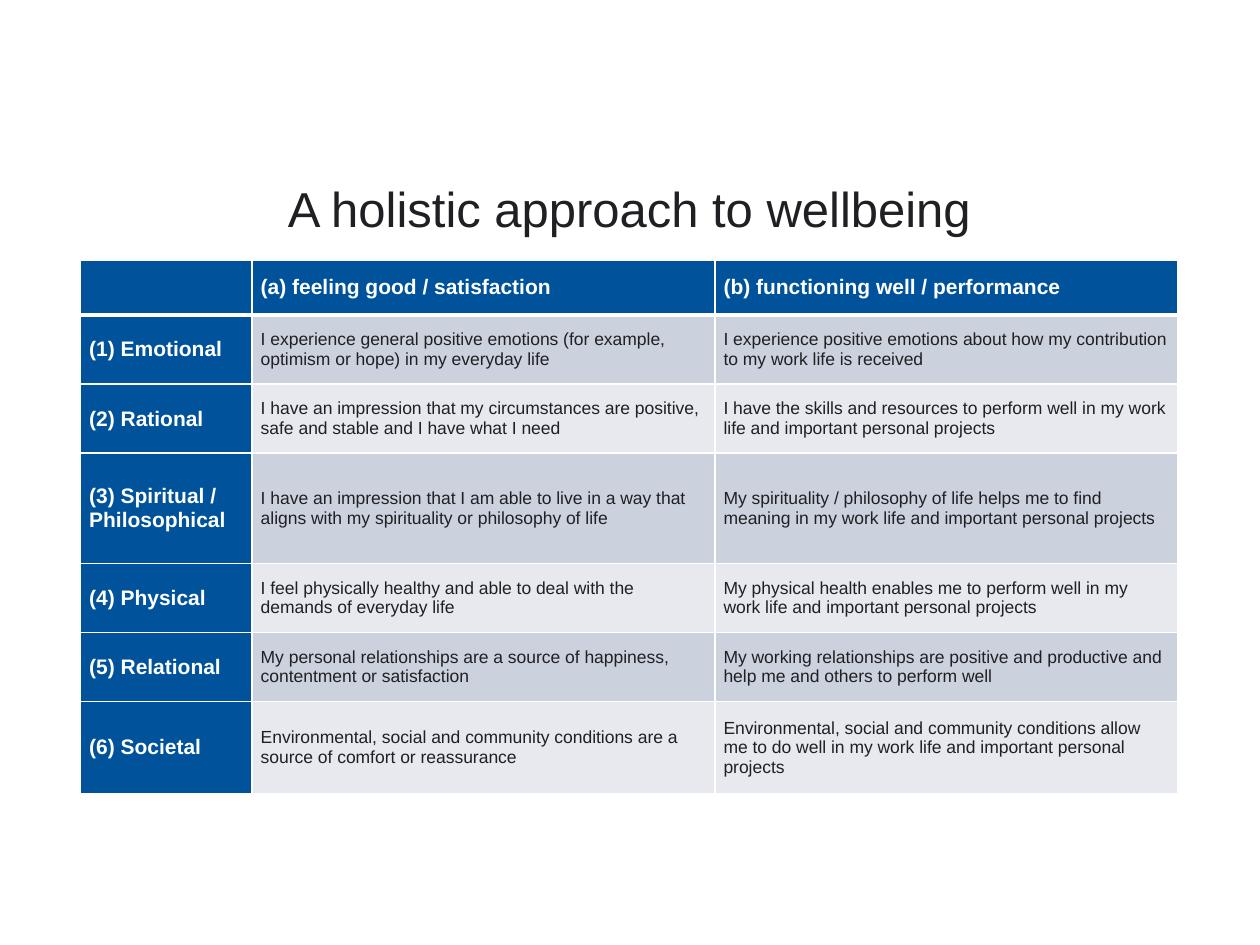
from lxml.etree import SubElement
from pptx import Presentation
from pptx.dml.color import RGBColor
from pptx.enum.text import MSO_ANCHOR, PP_ALIGN
from pptx.oxml.ns import qn
from pptx.util import Pt

TITLE = "A holistic approach to wellbeing"
ROWS = [
    ("", "(a) feeling good / satisfaction", "(b) functioning well / performance"),
    ("(1) Emotional",
     "I experience general positive emotions (for example, optimism or hope) in my everyday life",
     "I experience positive emotions about how my contribution to my work life is received"),
    ("(2) Rational",
     "I have an impression that my circumstances are positive, safe and stable and I have what I need",
     "I have the skills and resources to perform well in my work life and important personal projects"),
    ("(3) Spiritual / Philosophical",
     "I have an impression that I am able to live in a way that aligns with my spirituality or philosophy of life",
     "My spirituality / philosophy of life helps me to find meaning in my work life and important personal projects"),
    ("(4) Physical",
     "I feel physically healthy and able to deal with the demands of everyday life",
     "My physical health enables me to perform well in my work life and important personal projects"),
    ("(5) Relational",
     "My personal relationships are a source of happiness, contentment or satisfaction",
     "My working relationships are positive and productive and help me and others to perform well"),
    ("(6) Societal",
     "Environmental, social and community conditions are a source of comfort or reassurance",
     "Environmental, social and community conditions allow me to do well in my work life and important personal projects"),
]
COLUMN_WIDTHS = [98, 264.5, 264.5]
ROW_HEIGHTS = [31.5, 39.5, 39.5, 63, 39.5, 39.5, 52.5]
LEFT, TITLE_TOP, TITLE_HEIGHT, TABLE_TOP = 46, 94.5, 53, 148.5
BLUE, WHITE, INK = "00539B", "FFFFFF", "202024"
BANDS = ["E7E9EF", "CCD1DE"]


def color(value):
    return RGBColor.from_string(value)


def add_span(para, text, size, ink, bold=False):
    span = para.add_run()
    span.text = text
    span.font.name = "Arial"
    span.font.size = Pt(size)
    span.font.bold = bold
    span.font.color.rgb = color(ink)


def set_borders(cell, top, bottom):
    properties = cell._tc.get_or_add_tcPr()
    for side, width in (("L", 1), ("R", 1), ("T", top), ("B", bottom)):
        line = SubElement(properties, qn(f"a:ln{side}"), w=str(Pt(width)))
        fill = SubElement(line, qn("a:solidFill"))
        SubElement(fill, qn("a:srgbClr"), val=WHITE)


def add_title(page):
    box = page.shapes.add_textbox(Pt(LEFT), Pt(TITLE_TOP), Pt(sum(COLUMN_WIDTHS)), Pt(TITLE_HEIGHT))
    frame = box.text_frame
    frame.word_wrap = True
    frame.vertical_anchor = MSO_ANCHOR.MIDDLE
    para = frame.paragraphs[0]
    para.alignment = PP_ALIGN.CENTER
    para.line_spacing = 0.9
    add_span(para, TITLE, 28, INK)


def add_grid(page):
    table = page.shapes.add_table(
        len(ROWS), len(COLUMN_WIDTHS), Pt(LEFT), Pt(TABLE_TOP),
        Pt(sum(COLUMN_WIDTHS)), Pt(sum(ROW_HEIGHTS))).table
    for column, width in zip(table.columns, COLUMN_WIDTHS):
        column.width = Pt(width)
    for row, height in zip(table.rows, ROW_HEIGHTS):
        row.height = Pt(height)
    for row_index, texts in enumerate(ROWS):
        for column_index, text in enumerate(texts):
            cell = table.cell(row_index, column_index)
            heading = row_index == 0 or column_index == 0
            set_borders(cell, 3 if row_index == 1 else 1, 3 if row_index == 0 else 1)
            cell.fill.solid()
            cell.fill.fore_color.rgb = color(BLUE if heading else BANDS[row_index % 2])
            cell.vertical_anchor = MSO_ANCHOR.MIDDLE
            cell.margin_left = cell.margin_right = Pt(5)
            cell.margin_top = cell.margin_bottom = Pt(0)
            if text:
                add_span(cell.text_frame.paragraphs[0], text, 12 if heading else 10,
                         WHITE if heading else INK, heading)


def main():
    deck = Presentation()
    deck.slide_width, deck.slide_height = Pt(720), Pt(540)
    page = deck.slides.add_slide(deck.slide_layouts[6])
    add_title(page)
    add_grid(page)
    deck.save("out.pptx")


if __name__ == "__main__":
    main()
